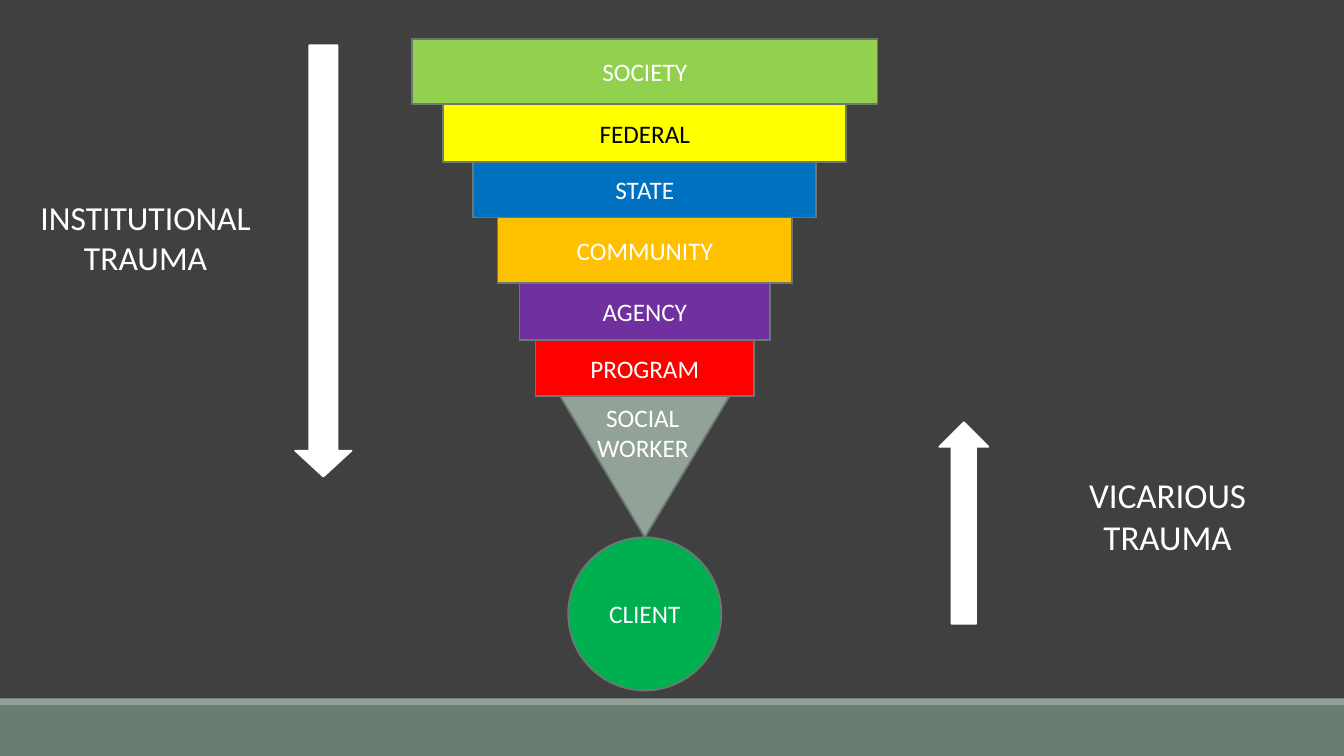
import pptx
import pptx.util
import pptx.dml.color
import pptx.enum.shapes
import pptx.enum.text

Cm, Pt = pptx.util.Cm, pptx.util.Pt
RGB = pptx.dml.color.RGBColor
SHAPE = pptx.enum.shapes.MSO_SHAPE
TEXT = pptx.enum.text

WHITE = RGB(0xFF, 0xFF, 0xFF)
BLACK = RGB(0x00, 0x00, 0x00)
CHARCOAL = RGB(0x40, 0x40, 0x40)
SAGE = RGB(0x93, 0xA2, 0x99)
DARK_SAGE = RGB(0x6B, 0x7D, 0x72)
OUTLINE = RGB(0x6D, 0x78, 0x71)
LIME = RGB(0x92, 0xD0, 0x50)
YELLOW = RGB(0xFF, 0xFF, 0x00)
BLUE = RGB(0x00, 0x70, 0xC0)
AMBER = RGB(0xFF, 0xC0, 0x00)
PURPLE = RGB(0x70, 0x30, 0xA0)
RED = RGB(0xFF, 0x00, 0x00)
GREEN = RGB(0x00, 0xB0, 0x50)

SLIDE_W, SLIDE_H = 33.87, 19.05
FUNNEL_CENTER, FUNNEL_TOP = 16.25, 0.99

# name, width, height, fill, text colour
LEVELS = [
    ("SOCIETY", 11.73, 1.64, LIME, WHITE),
    ("FEDERAL", 10.16, 1.46, YELLOW, BLACK),
    ("STATE", 8.64, 1.39, BLUE, WHITE),
    ("COMMUNITY", 7.42, 1.66, AMBER, WHITE),
    ("AGENCY", 6.32, 1.43, PURPLE, WHITE),
    ("PROGRAM", 5.51, 1.41, RED, WHITE),
]
WORKER_W, WORKER_H = 4.27, 3.56
CLIENT_SIZE = 3.86

FLOOR = [(17.6, 0.18, SAGE), (17.78, 1.27, DARK_SAGE)]
ARROWS = [
    (SHAPE.DOWN_ARROW, 7.44, 1.14, 1.42, 10.87, 0.46),
    (SHAPE.UP_ARROW, 23.67, 10.64, 1.24, 5.08, 0.5),
]
LABELS = [
    ("SOCIAL WORKER", 14.27, 10.01, 3.86, 1.8, 18),
    ("INSTITUTIONAL TRAUMA", 0.66, 4.83, 6.02, 2.31, 24),
    ("VICARIOUS TRAUMA", 27.0, 11.81, 4.85, 2.39, 25),
]


def add_text(sp, text, size, color, anchor):
    tf = sp.text_frame
    tf.word_wrap = True
    tf.vertical_anchor = anchor
    p = tf.paragraphs[0]
    p.alignment = TEXT.PP_ALIGN.CENTER
    r = p.add_run()
    r.text = text
    r.font.name = "Calibri"
    r.font.size = Pt(size)
    r.font.color.rgb = color


def add_shape(s, kind, x, y, w, h, fill, line=None):
    sp = s.shapes.add_shape(kind, Cm(x), Cm(y), Cm(w), Cm(h))
    sp.shadow.inherit = False
    sp.fill.solid()
    sp.fill.fore_color.rgb = fill
    if line is None:
        sp.line.fill.background()
    else:
        sp.line.color.rgb = line
        sp.line.width = Pt(1.25)
    return sp


def add_centered(s, kind, y, w, h, fill):
    return add_shape(s, kind, FUNNEL_CENTER - w / 2, y, w, h, fill, OUTLINE)


def main():
    prs = pptx.Presentation()
    prs.slide_width, prs.slide_height = Cm(SLIDE_W), Cm(SLIDE_H)
    s = prs.slides.add_slide(prs.slide_layouts[6])
    s.background.fill.solid()
    s.background.fill.fore_color.rgb = CHARCOAL

    for y, h, fill in FLOOR:
        add_shape(s, SHAPE.RECTANGLE, 0, y, SLIDE_W, h, fill)

    y = FUNNEL_TOP
    for name, w, h, fill, color in LEVELS:
        sp = add_centered(s, SHAPE.RECTANGLE, y, w, h, fill)
        add_text(sp, name, 18, color, TEXT.MSO_ANCHOR.MIDDLE)
        y += h

    worker = add_centered(s, SHAPE.ISOSCELES_TRIANGLE, y, WORKER_W, WORKER_H, SAGE)
    worker.rotation = 180
    y += WORKER_H
    client = add_centered(s, SHAPE.OVAL, y, CLIENT_SIZE, CLIENT_SIZE, GREEN)
    add_text(client, "CLIENT", 18, WHITE, TEXT.MSO_ANCHOR.MIDDLE)

    for kind, x, y, w, h, head in ARROWS:
        sp = add_shape(s, kind, x, y, w, h, WHITE, WHITE)
        sp.adjustments[0] = 0.5
        sp.adjustments[1] = head

    for text, x, y, w, h, size in LABELS:
        sp = s.shapes.add_textbox(Cm(x), Cm(y), Cm(w), Cm(h))
        add_text(sp, text, size, WHITE, TEXT.MSO_ANCHOR.TOP)
        sp.text_frame.auto_size = TEXT.MSO_AUTO_SIZE.SHAPE_TO_FIT_TEXT

    prs.save("out.pptx")


if __name__ == "__main__":
    main()
